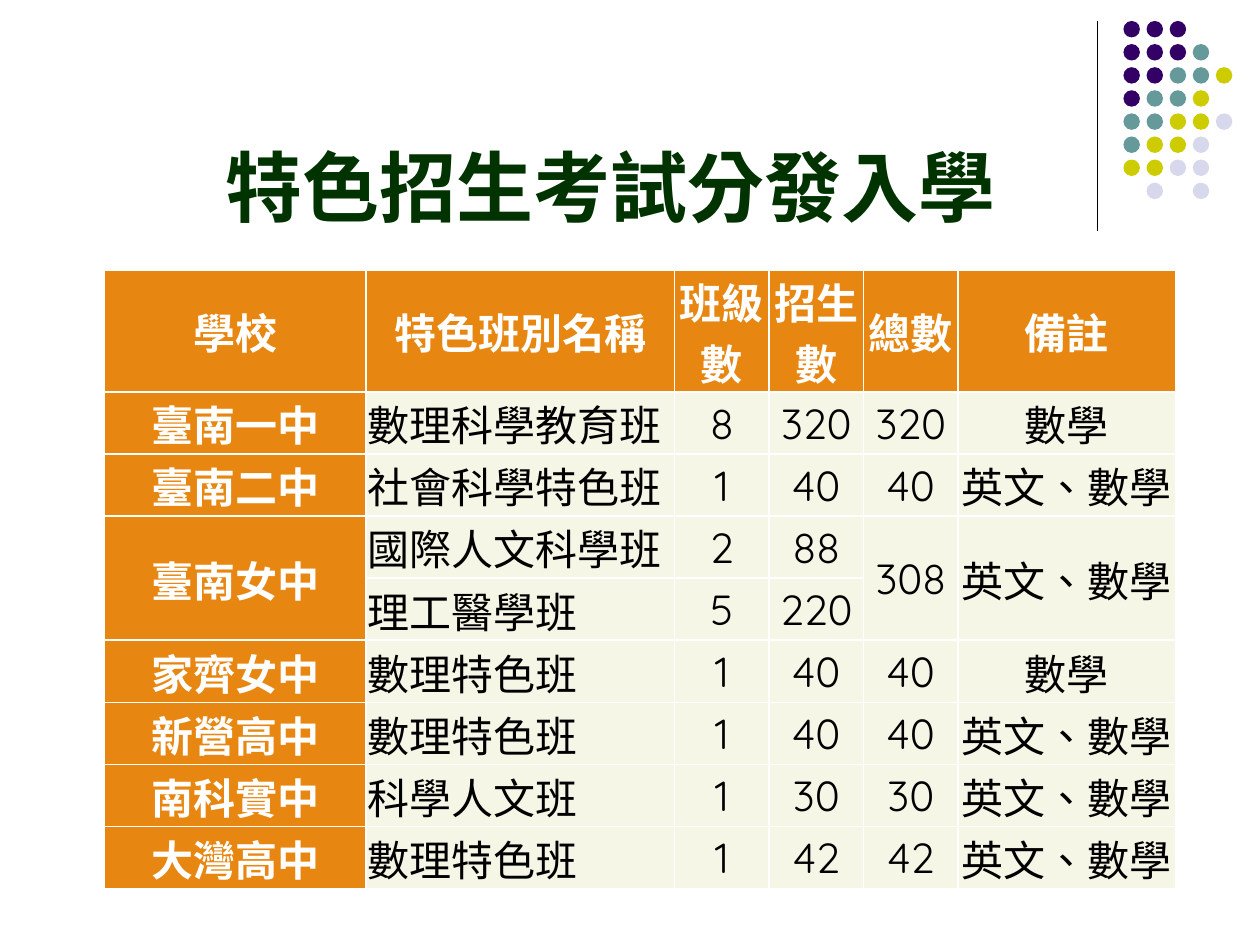
from pptx import Presentation
from pptx.dml.color import RGBColor
from pptx.enum.lang import MSO_LANGUAGE_ID
from pptx.enum.shapes import MSO_CONNECTOR, MSO_SHAPE
from pptx.enum.text import MSO_ANCHOR, PP_ALIGN
from pptx.oxml.ns import qn
from pptx.util import Pt
from lxml.etree import SubElement

BLACK = RGBColor(0x00, 0x00, 0x00)
WHITE = RGBColor(0xFF, 0xFF, 0xFF)
DARK_GREEN = RGBColor(0x00, 0x33, 0x00)
ORANGE = RGBColor(0xE7, 0x87, 0x12)
CREAM = RGBColor(0xF6, 0xF6, 0xE7)
PURPLE = RGBColor(0x33, 0x00, 0x66)
TEAL = RGBColor(0x66, 0x99, 0x99)
LIME = RGBColor(0xCC, 0xCC, 0x00)
LAVENDER = RGBColor(0xD8, 0xD8, 0xEC)

HEADING_FONT = "Calibri"
BODY_FONT = "Quicksand"
CHINESE_FONT = "Noto Sans CJK SC"

# One letter per dot, a space where there is none
DOT_COLORS = {"P": PURPLE, "T": TEAL, "Y": LIME, "L": LAVENDER}
DOT_ROWS = ["PPP", "PPPT", "PPTTY", "PTTY", "TTYYL", "TYYL", "YYLL", " L L"]
DOT_PITCH = 13.2

COLUMN_WIDTHS = [149.5, 176.3, 54, 54, 54, 124.2]
HEADER_HEIGHT = 69.7
ROW_HEIGHT = 35.5
# None continues the cell above
SCHOOL_ROWS = [
    ["學校", "特色班別名稱", "班級數", "招生數", "總數", "備註"],
    ["臺南一中", "數理科學教育班", "8", "320", "320", "數學"],
    ["臺南二中", "社會科學特色班", "1", "40", "40", "英文、數學"],
    ["臺南女中", "國際人文科學班", "2", "88", "308", "英文、數學"],
    [None, "理工醫學班", "5", "220", None, None],
    ["家齊女中", "數理特色班", "1", "40", "40", "數學"],
    ["新營高中", "數理特色班", "1", "40", "40", "英文、數學"],
    ["南科實中", "科學人文班", "1", "30", "30", "英文、數學"],
    ["大灣高中", "數理特色班", "1", "42", "42", "英文、數學"],
]


def write_text(text_frame, text, *, size, font, color, bold=False, align=PP_ALIGN.LEFT):
    paragraph = text_frame.paragraphs[0]
    paragraph.alignment = align
    run = paragraph.add_run()
    run.text = text
    run.font.size = Pt(size)
    run.font.name = font
    run.font.bold = bold
    run.font.color.rgb = color
    run.font.language_id = MSO_LANGUAGE_ID.TAIWAN if hasattr(
        MSO_LANGUAGE_ID, "TAIWAN") else MSO_LANGUAGE_ID.TRADITIONAL_CHINESE
    SubElement(run.font._element, qn("a:ea"), typeface=CHINESE_FONT)


def set_borders(cell, color, width):
    properties = cell._tc.get_or_add_tcPr()
    for position, side in enumerate(("a:lnL", "a:lnR", "a:lnT", "a:lnB")):
        line = SubElement(properties, qn(side), w=str(Pt(width)))
        fill = SubElement(line, qn("a:solidFill"))
        SubElement(fill, qn("a:srgbClr"), val=str(color))
        properties.insert(position, line)


class SlideBuilder:
    def __init__(self, slide, table_size=24, title_size=44):
        self.slide = slide
        self.table_size = table_size
        self.title_size = title_size

    def line(self, x1, y1, x2, y2, color, width):
        connector = self.slide.shapes.add_connector(
            MSO_CONNECTOR.STRAIGHT, Pt(x1), Pt(y1), Pt(x2), Pt(y2))
        connector.line.color.rgb = color
        connector.line.width = Pt(width)
        SubElement(connector._element.spPr, qn("a:effectLst"))

    def dot(self, left, top, diameter, color):
        shape = self.slide.shapes.add_shape(
            MSO_SHAPE.OVAL, Pt(left), Pt(top), Pt(diameter), Pt(diameter))
        shape.shadow.inherit = False
        shape.fill.solid()
        shape.fill.fore_color.rgb = color
        shape.line.fill.background()

    def title(self, text, left, top, width, height):
        text_frame = self.slide.shapes.add_textbox(
            Pt(left), Pt(top), Pt(width), Pt(height)).text_frame
        text_frame.word_wrap = True
        text_frame.vertical_anchor = MSO_ANCHOR.BOTTOM
        write_text(text_frame, text, size=self.title_size, font=CHINESE_FONT,
                   color=DARK_GREEN, bold=True)

    def table(self, rows, left, top, widths, header_height, row_height):
        heights = [header_height] + [row_height] * (len(rows) - 1)
        table = self.slide.shapes.add_table(
            len(rows), len(widths), Pt(left), Pt(top),
            Pt(sum(widths)), Pt(sum(heights))).table
        for column, width in zip(table.columns, widths):
            column.width = Pt(width)
        for row, height in zip(table.rows, heights):
            row.height = Pt(height)
        for row_index, values in enumerate(rows):
            for column_index, text in enumerate(values):
                cell = table.cell(row_index, column_index)
                heading = row_index == 0 or column_index == 0
                self.cell(cell, text, heading, centered=heading or column_index != 1)
                if text is None:
                    table.cell(row_index - 1, column_index).merge(cell)

    def cell(self, cell, text, heading, centered):
        cell.margin_left = cell.margin_right = cell.margin_top = Pt(0.72)
        cell.margin_bottom = Pt(0)
        cell.vertical_anchor = MSO_ANCHOR.MIDDLE
        cell.fill.solid()
        cell.fill.fore_color.rgb = ORANGE if heading else CREAM
        set_borders(cell, WHITE, 1)
        if text is not None:
            write_text(cell.text_frame, text, size=self.table_size,
                       font=HEADING_FONT if heading else BODY_FONT,
                       color=WHITE if heading else BLACK, bold=heading,
                       align=PP_ALIGN.CENTER if centered else PP_ALIGN.LEFT)


def main():
    presentation = Presentation()
    presentation.slide_width = Pt(720)
    presentation.slide_height = Pt(540)
    builder = SlideBuilder(presentation.slides.add_slide(presentation.slide_layouts[6]))

    # Corner decoration
    builder.line(627, 12, 627, 132, BLACK, 0.75)
    for row, letters in enumerate(DOT_ROWS):
        for column, letter in enumerate(letters):
            if letter in DOT_COLORS:
                builder.dot(642 + column * DOT_PITCH, 12 + row * DOT_PITCH,
                            9.4, DOT_COLORS[letter])

    # Title
    builder.title("特色招生考試分發入學", 122, 60.5, 526, 75.6)

    # Admission table
    builder.table(SCHOOL_ROWS, 59.7, 154.2, COLUMN_WIDTHS, HEADER_HEIGHT, ROW_HEIGHT)

    presentation.save("out.pptx")


if __name__ == "__main__":
    main()
